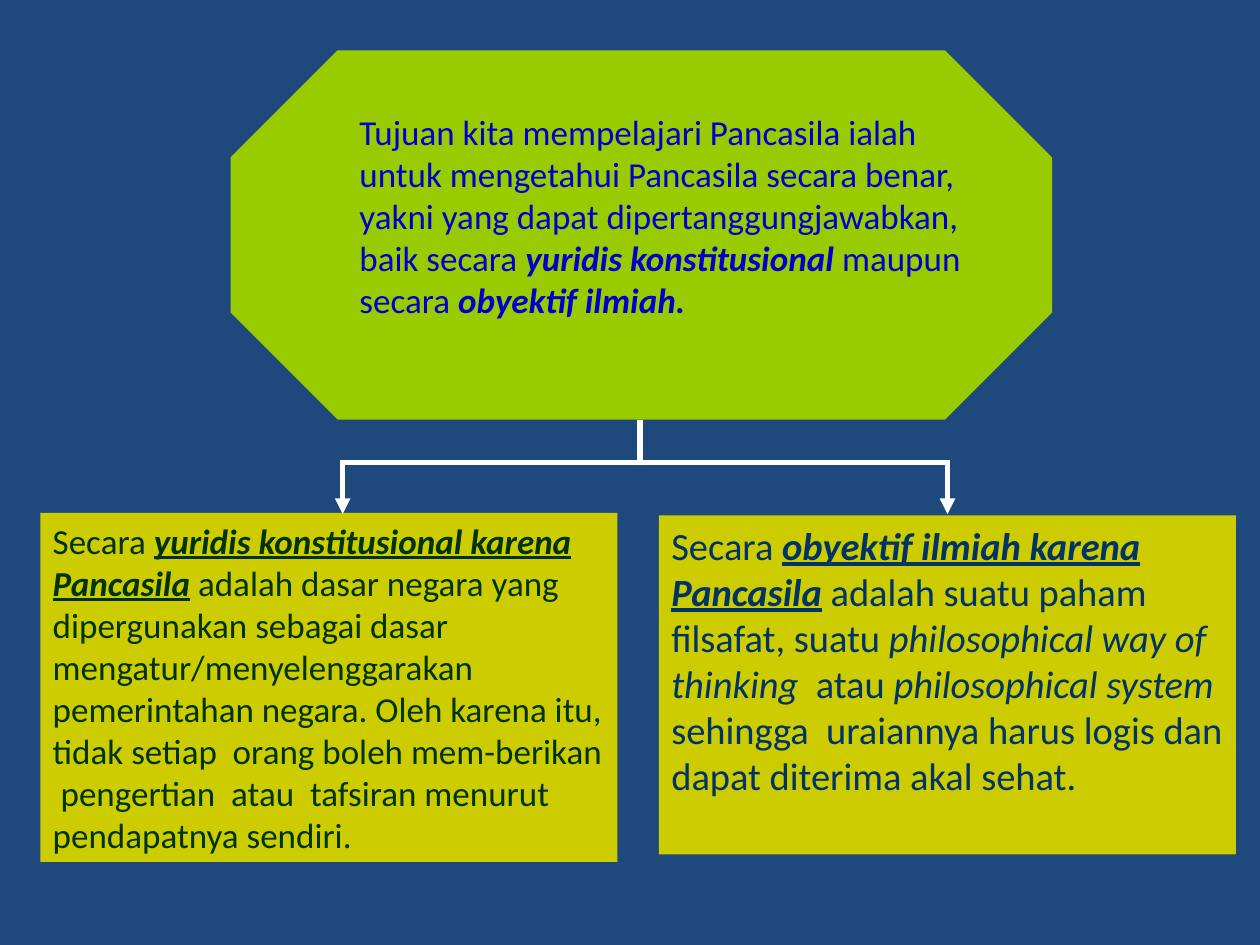
"""Build a slide on the two aims of studying Pancasila."""
from lxml import etree
from pptx import Presentation
from pptx.dml.color import RGBColor
from pptx.enum.shapes import MSO_CONNECTOR, MSO_SHAPE
from pptx.enum.text import MSO_ANCHOR, PP_ALIGN
from pptx.oxml.ns import qn
from pptx.util import Inches, Pt

OCTAGON, RECT = MSO_SHAPE.OCTAGON, MSO_SHAPE.RECTANGLE
LINE = MSO_CONNECTOR.STRAIGHT
TOP, LEFT = MSO_ANCHOR.TOP, PP_ALIGN.LEFT

COLORS = {"back": "1F497D", "lime": "99CC00", "gold": "CCCC00",
          "blue": "0000CC", "green": "003300", "navy": "003366",
          "white": "FFFFFF"}
FONT = "Calibri"

GOAL = [
    ("Tujuan kita mempelajari Pancasila ialah untuk mengetahui Pancasila "
     "secara benar, yakni yang dapat dipertanggungjawabkan, baik secara", ""),
    (" yuridis konstitusional", "bi"),
    (" maupun   secara ", ""),
    ("obyektif ilmiah.", "bi"),
]
LEGAL = [
    ("Secara ", ""),
    ("yuridis konstitusional karena Pancasila", "biu"),
    (" adalah dasar negara yang dipergunakan sebagai dasar "
     "mengatur/menyelenggarakan pemerintahan negara. Oleh karena itu, "
     "tidak setiap  orang boleh mem-berikan  pengertian  atau  tafsiran "
     "menurut pendapatnya sendiri.", ""),
]
LOGIC = [
    ("Secara ", ""),
    ("obyektif ilmiah karena Pancasila", "biu"),
    (" adalah suatu paham filsafat, suatu ", ""),
    ("philosophical way of thinking  ", "i"),
    ("atau ", ""),
    ("philosophical system  ", "i"),
    ("sehingga  uraiannya harus logis dan dapat diterima akal sehat.", ""),
]
BOXES = [
    (OCTAGON, (1.83, 0.4, 6.52, 2.93), "lime", "blue", 20, 0.5, GOAL),
    (RECT, (0.32, 4.07, 4.58, 2.77), "gold", "green", 20, 0, LEGAL),
    (RECT, (5.23, 4.09, 4.58, 2.69), "gold", "navy", 22, 0, LOGIC),
]
STEM, BAR, TIP = 3.33, 3.67, 4.08
MID, ENDS, LAP = 5.08, (2.72, 7.52), 0.02


def color(name):
    return RGBColor.from_string(COLORS[name])


def add_box(slide, kind, area, fill, ink, size, indent, runs):
    box = slide.shapes.add_shape(kind, *map(Inches, area))
    box.shadow.inherit = False
    box.fill.solid()
    box.fill.fore_color.rgb = color(fill)
    box.line.fill.background()
    if kind == OCTAGON:
        box.adjustments[0] = 0.29
    frame = box.text_frame
    frame.word_wrap = True
    frame.vertical_anchor = TOP
    para = frame.paragraphs[0]
    para.alignment = LEFT
    if indent:
        props = para._p.get_or_add_pPr()
        props.set("marL", str(Inches(indent)))
        props.set("indent", "0")
    for text, style in runs:
        run = para.add_run()
        run.text = text
        font = run.font
        font.name, font.size = FONT, Pt(size)
        font.color.rgb = color(ink)
        font.bold = "b" in style
        font.italic = "i" in style
        font.underline = "u" in style


def add_line(slide, start, end, arrow=False):
    line = slide.shapes.add_connector(LINE, *map(Inches, start + end))
    line.line.color.rgb = color("white")
    line.line.width = Pt(3)
    if arrow:
        tail = etree.SubElement(line.line._get_or_add_ln(), qn("a:tailEnd"))
        tail.set("type", "triangle")
    etree.SubElement(line._element.spPr, qn("a:effectLst"))


def main():
    deck = Presentation()
    deck.slide_width, deck.slide_height = Inches(10), Inches(7.5)
    slide = deck.slides.add_slide(deck.slide_layouts[6])
    slide.background.fill.solid()
    slide.background.fill.fore_color.rgb = color("back")
    for box in BOXES:
        add_box(slide, *box)
    add_line(slide, (ENDS[0] - LAP, BAR), (ENDS[1] + LAP, BAR))
    for x in ENDS:
        add_line(slide, (x, BAR), (x, TIP), arrow=True)
    add_line(slide, (MID, BAR), (MID, STEM))
    deck.save("out.pptx")


if __name__ == "__main__":
    main()
